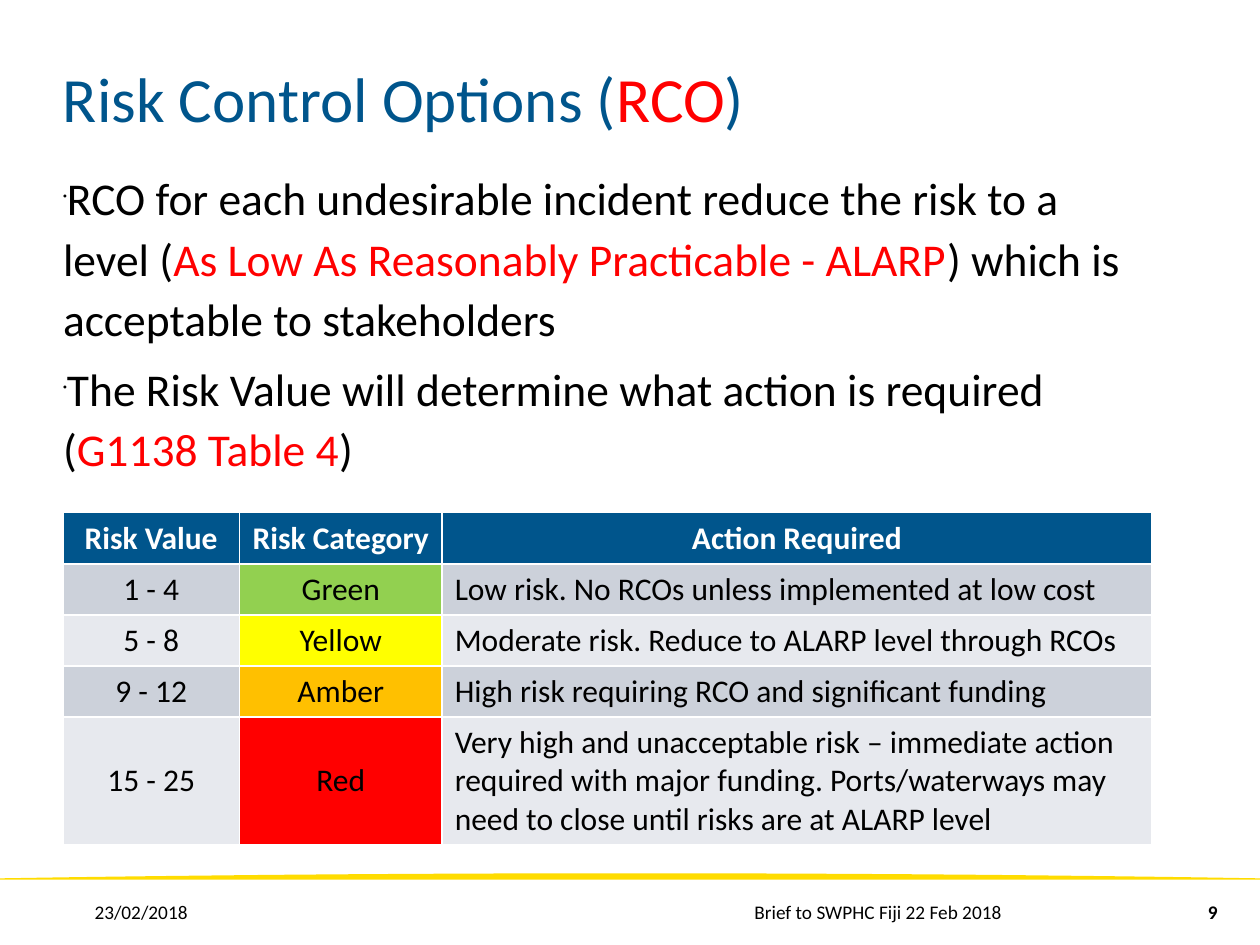
import pptx
import pptx.dml.color
import pptx.enum.text
import pptx.oxml
import pptx.oxml.ns
import pptx.util

Pt = pptx.util.Pt
ALIGN = pptx.enum.text.PP_ALIGN
ANCHOR = pptx.enum.text.MSO_ANCHOR

THEME = {
    "font": "Calibri",
    "blue": "00558C", "red": "FF0000", "black": "000000", "white": "FFFFFF",
    "swoosh": "FFDC00", "bands": ("CCD1DA", "E7E9EE"),
    "title": 36, "body": 26, "table": 18, "footer": 11,
}

TITLE = [[("Risk Control Options (", "blue"), ("RCO", "red"), (")", "blue")]]
BODY = [
    [("RCO for each undesirable incident reduce the risk to a level (", "black"),
     ("As Low As Reasonably Practicable - ALARP", "red"),
     (") which is acceptable to stakeholders", "black")],
    [("The Risk Value will determine what action is required (", "black"),
     ("G1138 Table 4", "red"), (")", "black")],
]
HEADINGS = ["Risk Value", "Risk Category", "Action Required"]
RISKS = [
    ("1 - 4", "Green", "92D050", "Low risk. No RCOs unless implemented at low cost"),
    ("5 - 8", "Yellow", "FFFF00", "Moderate risk. Reduce to ALARP level through RCOs"),
    ("9 - 12", "Amber", "FFC000", "High risk requiring RCO and significant funding"),
    ("15 - 25", "Red", "FF0000",
     "Very high and unacceptable risk – immediate action required with major "
     "funding. Ports/waterways may need to close until risks are at ALARP level"),
]
FOOTERS = [
    ("23/02/2018", 54, 167, ALIGN.LEFT, False),
    ("Brief to SWPHC Fiji 22 Feb 2018", 224, 348.5, ALIGN.RIGHT, False),
    ("9", 666, 54, ALIGN.CENTER, True),
]
COLUMN_WIDTHS = [100.8, 115.9, 405.4]
ROW_HEIGHTS = [29.2] * 4 + [73]
LEFT = 36


def rgb(value):
    return pptx.dml.color.RGBColor.from_string(value)


def apply_format(target, values):
    for name, value in values.items():
        setattr(target, name, value)


def add_span(para, text, size, color, bold=False):
    span = para.add_run()
    span.text = text
    apply_format(span.font, {"name": THEME["font"], "size": Pt(size), "bold": bold})
    span.font.color.rgb = rgb(THEME[color])


def add_bullet(para):
    properties = para._p.get_or_add_pPr()
    for tag, name, value in (("buSzPct", "val", "25000"), ("buChar", "char", "•")):
        element = pptx.oxml.parse_xml(f'<a:{tag} {pptx.oxml.ns.nsdecls("a")} {name}="{value}"/>')
        properties.append(element)


def add_text(page, bounds, paragraphs, size, anchor, align=ALIGN.LEFT,
             bold=False, bullets=False, spacing=None):
    box = page.shapes.add_textbox(*map(Pt, bounds))
    frame = box.text_frame
    sides = ("left", "top", "right", "bottom")
    apply_format(frame, {f"margin_{side}": 0 for side in sides})
    apply_format(frame, {"word_wrap": True, "vertical_anchor": anchor})
    for index, spans in enumerate(paragraphs):
        para = frame.add_paragraph() if index else frame.paragraphs[0]
        apply_format(para, {"alignment": align, **(spacing or {})})
        if bullets:
            add_bullet(para)
        for text, color in spans:
            add_span(para, text, size, color, bold)


def add_swoosh(page, width=720, crest=499, rise=2.9, base=502.6, steps=40):
    curve = []
    for step in range(steps + 1):
        offset = 1 - 2 * step / steps
        curve.append((Pt(width * (1 + offset) / 2), Pt(crest + rise * offset ** 2)))
    builder = page.shapes.build_freeform(Pt(0), Pt(base))
    builder.add_line_segments([(Pt(width), Pt(base))] + curve, close=True)
    shape = builder.convert_to_shape()
    shape.shadow.inherit = False
    shape.fill.solid()
    shape.fill.fore_color.rgb = rgb(THEME["swoosh"])
    shape.line.fill.background()


def fill_cell(cell, text, fill, color, align, bold=False):
    cell.fill.solid()
    cell.fill.fore_color.rgb = rgb(fill)
    para = cell.text_frame.paragraphs[0]
    para.alignment = align
    add_span(para, text, THEME["table"], color, bold)


def add_risk_table(page):
    table = page.shapes.add_table(
        len(RISKS) + 1, len(HEADINGS), Pt(LEFT), Pt(293),
        Pt(sum(COLUMN_WIDTHS)), Pt(sum(ROW_HEIGHTS))).table
    for column, width in zip(table.columns, COLUMN_WIDTHS):
        column.width = Pt(width)
    for row, height in zip(table.rows, ROW_HEIGHTS):
        row.height = Pt(height)
    for column, heading in enumerate(HEADINGS):
        fill_cell(table.cell(0, column), heading, THEME["blue"], "white", ALIGN.CENTER, True)
    for row, (value, category, category_fill, action) in enumerate(RISKS, 1):
        band = THEME["bands"][(row - 1) % 2]
        cells = [(value, band, ALIGN.CENTER), (category, category_fill, ALIGN.CENTER),
                 (action, band, ALIGN.LEFT)]
        for column, (text, fill, align) in enumerate(cells):
            fill_cell(table.cell(row, column), text, fill, "black", align)
    for column in (0, 1):
        table.cell(len(RISKS), column).vertical_anchor = ANCHOR.MIDDLE


def main():
    deck = pptx.Presentation()
    apply_format(deck, {"slide_width": Pt(720), "slide_height": Pt(540)})
    page = deck.slides.add_slide(deck.slide_layouts[6])
    add_swoosh(page)
    add_text(page, (LEFT, 26, 648, 51), TITLE, THEME["title"], ANCHOR.BOTTOM)
    add_text(page, (LEFT, 94.3, 605, 193), BODY, THEME["body"], ANCHOR.TOP, bullets=True,
             spacing={"line_spacing": 1.1, "space_after": Pt(6)})
    add_risk_table(page)
    for text, left, width, align, bold in FOOTERS:
        add_text(page, (left, 502.6, width, 37.4), [[(text, "black")]],
                 THEME["footer"], ANCHOR.MIDDLE, align, bold)
    deck.save("out.pptx")


if __name__ == "__main__":
    main()
